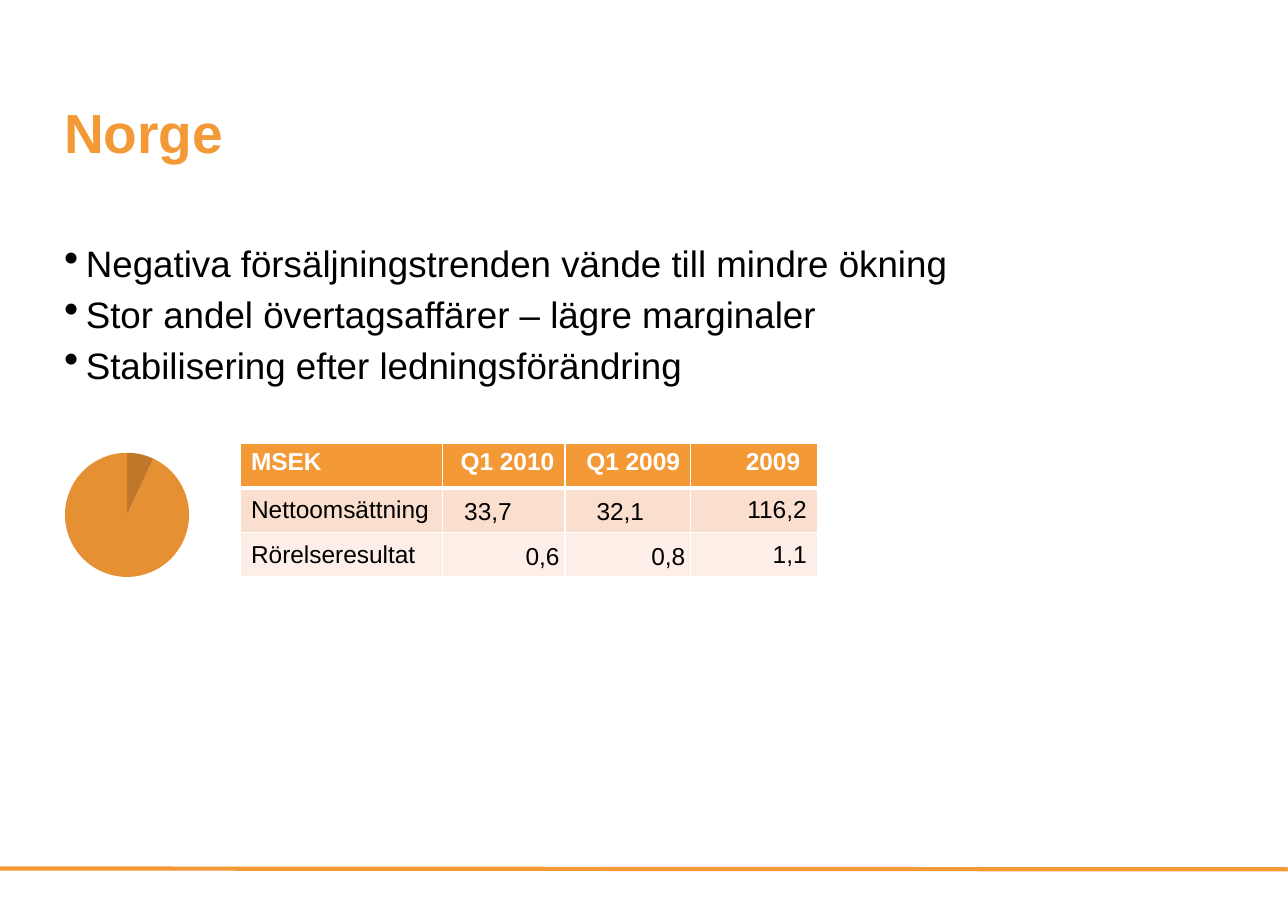
from lxml import etree
from pptx import Presentation
from pptx.chart.data import CategoryChartData
from pptx.dml.color import RGBColor
from pptx.enum.chart import XL_CHART_TYPE
from pptx.enum.shapes import MSO_CONNECTOR
from pptx.enum.text import MSO_ANCHOR, PP_ALIGN
from pptx.oxml import parse_xml
from pptx.oxml.ns import nsdecls, qn
from pptx.util import Cm, Pt

LEFT, RIGHT = PP_ALIGN.LEFT, PP_ALIGN.RIGHT
TOP, MIDDLE = MSO_ANCHOR.TOP, MSO_ANCHOR.MIDDLE
PIE, STRAIGHT = XL_CHART_TYPE.PIE, MSO_CONNECTOR.STRAIGHT

ORANGE = RGBColor(0xF3, 0x99, 0x36)
AMBER = RGBColor(0xE5, 0x90, 0x32)
BROWN = RGBColor(0xBF, 0x78, 0x2A)
PEACH = RGBColor(0xFA, 0xDE, 0xCE)
CREAM = RGBColor(0xFD, 0xEF, 0xE8)
BLACK = RGBColor(0, 0, 0)
WHITE = RGBColor(0xFF, 0xFF, 0xFF)

TITLE = "Norge"
POINTS = [
    "Negativa försäljningstrenden vände till mindre ökning",
    "Stor andel övertagsaffärer – lägre marginaler",
    "Stabilisering efter ledningsförändring",
]
ROWS = [
    ("MSEK", "Q1 2010", "Q1 2009", "2009"),
    ("Nettoomsättning", "33,7", "32,1", "116,2"),
    ("Rörelseresultat", "0,6", "0,8", "1,1"),
]
FILLS = [ORANGE, PEACH, CREAM]
WIDTHS = [4.67, 2.82, 2.9, 2.92]
HIGH = 1.03
PAD, THIN = 0.25, 0.13
INDENTS = {(0, 3): 0.4, (1, 1): 1.23, (1, 2): 1.08}  # right margins that differ
SHARES = {"1": 7, "2": 93, "3": None, "4": None}
SLICES = [BROWN, AMBER]
PLOT = {"x": 0.23, "y": 0.1, "w": 0.54, "h": 0.8}


def write(frame, lines, size, color=BLACK, bold=False, align=LEFT,
          space=1.0, bullet=False):
    frame.word_wrap = True
    for i, line in enumerate(lines):
        para = frame.paragraphs[0] if i == 0 else frame.add_paragraph()
        if bullet:
            props = para._p.get_or_add_pPr()
            props.set("marL", str(Cm(0.5)))
            props.set("indent", str(-Cm(0.5)))
            etree.SubElement(props, qn("a:buSzPct")).set("val", "115000")
            etree.SubElement(props, qn("a:buChar")).set("char", "•")
        para.alignment = align
        para.line_spacing = space
        run = para.add_run()
        run.text = line
        font = run.font
        font.name, font.size, font.bold = "Arial", Pt(size), bold
        font.color.rgb = color


def add_text(slide, box, lines, **form):
    frame = slide.shapes.add_textbox(*map(Cm, box)).text_frame
    frame.margin_left = frame.margin_right = 0
    frame.margin_top = frame.margin_bottom = 0
    frame.vertical_anchor = TOP
    write(frame, lines, **form)


def edge(cell, side, width):
    """Draw a white border on one side of a cell."""
    cell._tc.get_or_add_tcPr().append(parse_xml(
        f'<a:ln{side} {nsdecls("a")} w="{Pt(width)}"><a:solidFill>'
        f'<a:srgbClr val="{WHITE}"/></a:solidFill></a:ln{side}>'))


def add_grid(slide):
    table = slide.shapes.add_table(
        len(ROWS), len(WIDTHS), Cm(5.54), Cm(10.21),
        Cm(sum(WIDTHS)), Cm(HIGH * len(ROWS))).table
    for col, width in zip(table.columns, WIDTHS):
        col.width = Cm(width)
    for r, texts in enumerate(ROWS):
        table.rows[r].height = Cm(HIGH)
        head = r == 0
        for c, text in enumerate(texts):
            cell = table.cell(r, c)
            tight = not head and c in (1, 2)
            side = THIN if tight else PAD
            cell.margin_left = Cm(side)
            cell.margin_right = Cm(INDENTS.get((r, c), side))
            cell.margin_top = cell.margin_bottom = Cm(0 if tight else THIN)
            cell.vertical_anchor = TOP if head else MIDDLE
            for name in "LRTB":
                thick = (name == "B" and head) or (name == "T" and r == 1)
                edge(cell, name, 3 if thick else 1)
            cell.fill.solid()
            cell.fill.fore_color.rgb = FILLS[r]
            write(cell.text_frame, [text], 16, WHITE if head else BLACK,
                  bold=head, align=RIGHT if c else LEFT,
                  space=1.15 if tight else 1.0)


def add_pie(slide):
    data = CategoryChartData()
    data.categories = list(SHARES)
    data.add_series("Series 1", list(SHARES.values()))
    chart = slide.shapes.add_chart(
        PIE, Cm(0.25), Cm(10.08), Cm(5.36), Cm(3.58), data).chart
    chart.has_legend = chart.has_title = False
    chart.font.name, chart.font.size = "TeX Gyre Schola", Pt(18)
    chart.font.color.rgb = BLACK
    plot = chart.plots[0]
    plot.vary_by_categories = True
    for i, color in enumerate(SLICES):
        form = plot.series[0].points[i].format
        form.fill.solid()
        form.fill.fore_color.rgb = color
        form.line.fill.background()
    area = chart._chartSpace.find(".//" + qn("c:plotArea"))
    for old in area.findall(qn("c:layout")):
        area.remove(old)
    sizes = "".join(f'<c:{k} val="{v}"/>' for k, v in PLOT.items())
    area.insert(0, parse_xml(
        f'<c:layout {nsdecls("c")}><c:manualLayout>'
        '<c:layoutTarget val="inner"/><c:xMode val="edge"/>'
        f'<c:yMode val="edge"/>{sizes}</c:manualLayout></c:layout>'))


def main():
    deck = Presentation()
    deck.slide_width, deck.slide_height = Cm(29.7), Cm(21)
    slide = deck.slides.add_slide(deck.slide_layouts[6])
    rule = slide.shapes.add_connector(
        STRAIGHT, 0, Cm(20.02), deck.slide_width, Cm(20.04))
    rule.line.color.rgb, rule.line.width = ORANGE, Pt(2.75)
    etree.SubElement(rule._element.spPr, qn("a:effectLst"))
    add_text(slide, (1.48, 2.26, 27.58, 2.84), [TITLE],
             size=36, color=ORANGE, bold=True)
    add_text(slide, (1.48, 5.41, 27.53, 5.92), POINTS,
             size=24, space=1.15, bullet=True)
    add_grid(slide)
    add_pie(slide)
    deck.save("out.pptx")


if __name__ == "__main__":
    main()
